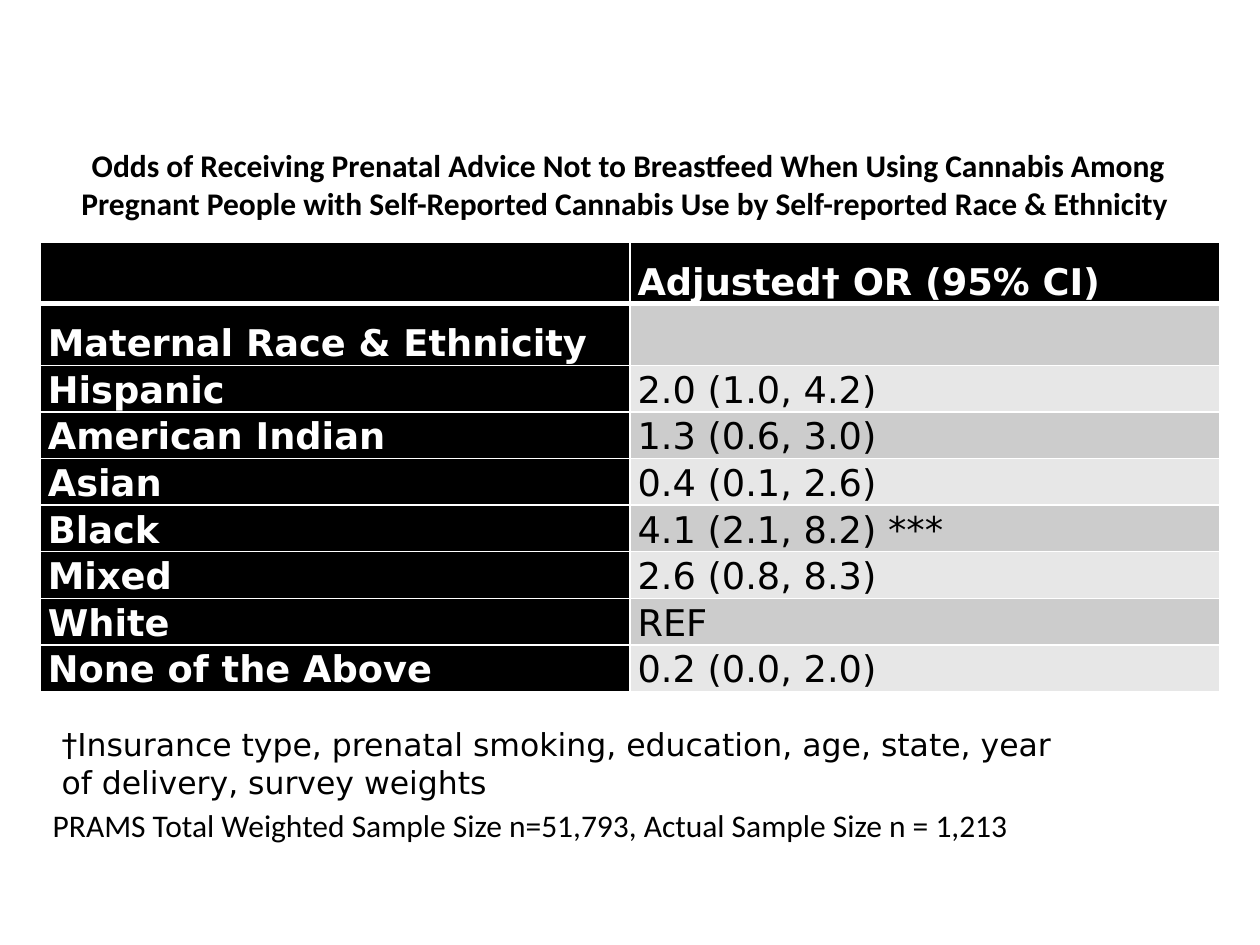
from dataclasses import dataclass

from lxml import etree
from pptx import Presentation
from pptx import util as u
from pptx.dml.color import RGBColor
from pptx.enum import text as t
from pptx.oxml import ns


@dataclass(frozen=True)
class Theme:
    black: str = "000000"
    white: str = "FFFFFF"
    dark_band: str = "CCCCCC"
    light_band: str = "E7E7E7"
    sans: str = "Calibri"
    table_font: str = "DejaVu Sans"
    text_size: int = 18
    table_size: int = 21


@dataclass(frozen=True)
class Area:
    """Shares of the slide's width and height."""
    left: float
    top: float
    width: float
    height: float


@dataclass(frozen=True)
class OddsRow:
    group: str
    odds: str
    height: float = 0.37


THEME = Theme()
SLIDE_WIDTH, SLIDE_HEIGHT = u.Inches(10), u.Inches(7.5)

TITLE_AREA = Area(0.031, 0.132, 0.936, 0.125)
TABLE_AREA = Area(0.032, 0.256, 0.936, 0.477)
FOOTNOTE_AREA = Area(-0.011, 0.761, 0.872, 0.095)
SAMPLE_AREA = Area(0.032, 0.844, 0.918, 0.068)

TITLE = ("Odds of Receiving Prenatal Advice Not to Breastfeed When Using Cannabis Among "
         "Pregnant People with Self-Reported Cannabis Use by Self-reported Race & Ethnicity ")
FOOTNOTE = ("†Insurance type, prenatal smoking, education, age, state, year of delivery, "
            "survey weights")
SAMPLE = "PRAMS Total Weighted Sample Size n=51,793, Actual Sample Size n = 1,213"
ROWS = [
    OddsRow("", "Adjusted† OR (95% CI)", 0.49),
    OddsRow("Maternal Race & Ethnicity", "", 0.49),
    OddsRow("Hispanic", "2.0 (1.0, 4.2)"),
    OddsRow("American Indian", "1.3 (0.6, 3.0)"),
    OddsRow("Asian", "0.4 (0.1, 2.6)"),
    OddsRow("Black", "4.1 (2.1, 8.2) ***"),
    OddsRow("Mixed", "2.6 (0.8, 8.3)"),
    OddsRow("White", "REF"),
    OddsRow("None of the Above", "0.2 (0.0, 2.0)"),
]


def set_all(target, values: dict) -> None:
    for name, value in values.items():
        setattr(target, name, value)


def bounds(area: Area) -> dict:
    return {"left": round(area.left * SLIDE_WIDTH), "top": round(area.top * SLIDE_HEIGHT),
            "width": round(area.width * SLIDE_WIDTH), "height": round(area.height * SLIDE_HEIGHT)}


def write(para, text: str, font: str, size: int, color: str, bold: bool = False,
          **spacing) -> None:
    set_all(para, spacing)
    span = para.add_run()
    span.text = text
    set_all(span.font, {"name": font, "size": u.Pt(size), "bold": bold})
    span.font.color.rgb = RGBColor.from_string(color)


def add_borders(cell, bottom_width: float) -> None:
    properties = cell._tc.get_or_add_tcPr()
    for side, width in (("L", 1), ("R", 1), ("T", 1), ("B", bottom_width)):
        line = etree.SubElement(properties, ns.qn(f"a:ln{side}"), w=str(u.Pt(width)))
        fill = etree.SubElement(line, ns.qn("a:solidFill"))
        etree.SubElement(fill, ns.qn("a:srgbClr"), val=THEME.white)


def fill_cell(cell, text: str, fill: str, heading: bool, bottom_width: float) -> None:
    add_borders(cell, bottom_width)
    cell.fill.solid()
    cell.fill.fore_color.rgb = RGBColor.from_string(fill)
    set_all(cell, {"vertical_anchor": t.MSO_ANCHOR.BOTTOM,
                   "margin_left": u.Inches(0.06), "margin_right": u.Inches(0.06),
                   "margin_top": 0, "margin_bottom": 0})
    if text:
        write(cell.text_frame.paragraphs[0], text, THEME.table_font, THEME.table_size,
              THEME.white if heading else THEME.black, heading,
              line_spacing=1.07, space_after=u.Pt(8))


def add_odds_table(page, area: Area, rows: list[OddsRow]) -> None:
    table = page.shapes.add_table(len(rows), 2, **bounds(area)).table
    for number, row in enumerate(rows):
        table.rows[number].height = u.Inches(row.height)
        band = THEME.dark_band if number % 2 else THEME.light_band
        for column, text in enumerate((row.group, row.odds)):
            heading = number == 0 or column == 0
            fill_cell(table.cell(number, column), text, THEME.black if heading else band,
                      heading, 3 if number == 0 else 1)


def add_note(page, area: Area, text: str, font: str, indent: float = 0, **spacing) -> None:
    box = page.shapes.add_textbox(**bounds(area))
    box.text_frame.word_wrap = True
    para = box.text_frame.paragraphs[0]
    if indent:
        para._p.get_or_add_pPr().set("marL", str(u.Inches(indent)))
    write(para, text, font, THEME.text_size, THEME.black, **spacing)


def main() -> None:
    deck = Presentation()
    set_all(deck, {"slide_width": SLIDE_WIDTH, "slide_height": SLIDE_HEIGHT})
    page = deck.slides.add_slide(deck.slide_layouts[5])

    # Title
    title = page.shapes.title
    set_all(title, bounds(TITLE_AREA))
    set_all(title.text_frame, {"word_wrap": True, "auto_size": t.MSO_AUTO_SIZE.NONE,
                               "vertical_anchor": t.MSO_ANCHOR.MIDDLE})
    write(title.text_frame.paragraphs[0], TITLE, THEME.sans, THEME.text_size, THEME.black,
          True, alignment=t.PP_ALIGN.CENTER)

    # Odds ratios by race and ethnicity
    add_odds_table(page, TABLE_AREA, ROWS)

    # Notes under the table
    add_note(page, FOOTNOTE_AREA, FOOTNOTE, THEME.table_font, indent=0.5, level=1)
    add_note(page, SAMPLE_AREA, SAMPLE, THEME.sans, line_spacing=1.07, space_after=u.Pt(6))

    deck.save("out.pptx")


if __name__ == "__main__":
    main()
